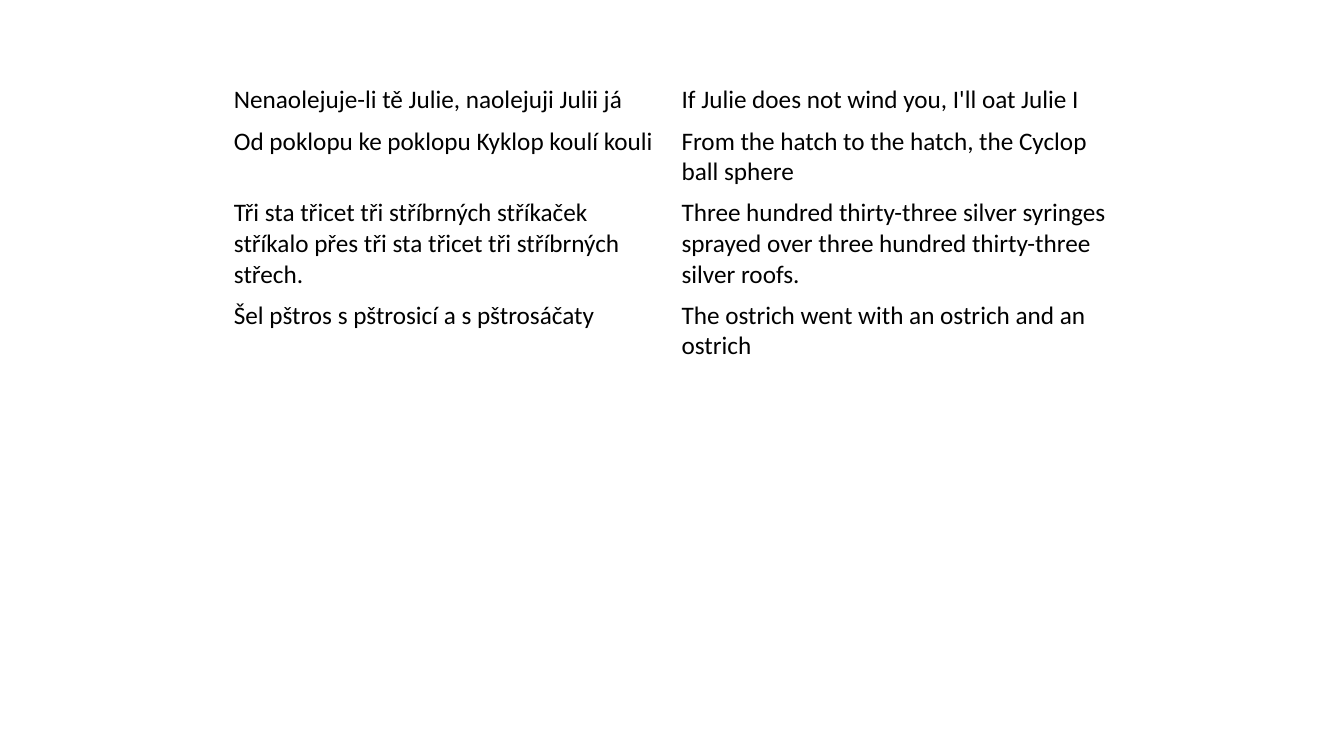
from pptx import Presentation
from pptx.dml.color import RGBColor
from pptx.util import Inches, Pt

TWISTERS = [
    ("Nenaolejuje-li tě Julie, naolejuji Julii já",
     "If Julie does not wind you, I'll oat Julie I"),
    ("Od poklopu ke poklopu Kyklop koulí kouli",
     "From the hatch to the hatch, the Cyclop ball sphere"),
    ("Tři sta třicet tři stříbrných stříkaček stříkalo přes tři sta třicet tři stříbrných střech.",
     "Three hundred thirty-three silver syringes sprayed over three hundred thirty-three silver roofs."),
    ("Šel pštros s pštrosicí a s pštrosáčaty",
     "The ostrich went with an ostrich and an ostrich"),
]
ROW_COUNT = 8
ROW_HEIGHT = 0.41
COLUMN_WIDTH = 4.44
LEFT, TOP = 2.22, 0.79


def color(value):
    return RGBColor.from_string(value)


deck = Presentation()
deck.slide_width, deck.slide_height = Inches(13.33), Inches(7.5)
page = deck.slides.add_slide(deck.slide_layouts[6])

table = page.shapes.add_table(
    ROW_COUNT, 2, Inches(LEFT), Inches(TOP),
    Inches(2 * COLUMN_WIDTH), Inches(ROW_COUNT * ROW_HEIGHT)).table
table.first_row = False
table.horz_banding = False
for column in table.columns:
    column.width = Inches(COLUMN_WIDTH)
for row in table.rows:
    row.height = Inches(ROW_HEIGHT)
for cell in table.iter_cells():
    cell.fill.background()

for row, twister in zip(table.rows, TWISTERS):
    for cell, text in zip(row.cells, twister):
        cell.text_frame.text = text
        font = cell.text_frame.paragraphs[0].runs[0].font
        font.name = "Calibri"
        font.size = Pt(18)
        font.color.rgb = color("000000")

deck.save("out.pptx")
